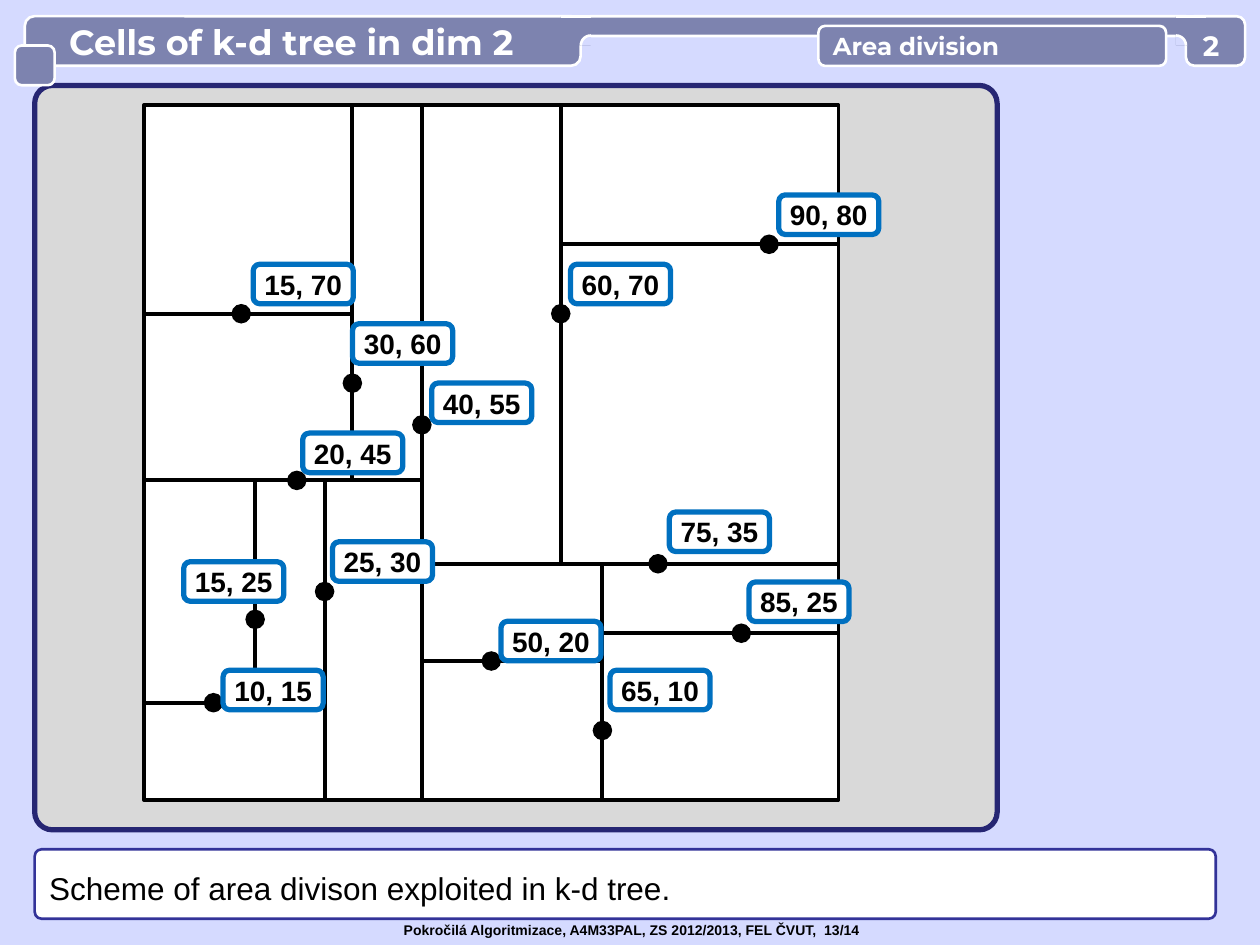
import math

from lxml import etree
from pptx import Presentation
from pptx.dml.color import RGBColor
from pptx.enum.shapes import MSO_CONNECTOR, MSO_SHAPE
from pptx.enum.text import MSO_ANCHOR, MSO_AUTO_SIZE, PP_ALIGN
from pptx.oxml.ns import qn
from pptx.util import Pt

RECT, ROUND = MSO_SHAPE.RECTANGLE, MSO_SHAPE.ROUNDED_RECTANGLE
STRAIGHT = MSO_CONNECTOR.STRAIGHT
LEFT, CENTER = PP_ALIGN.LEFT, PP_ALIGN.CENTER
MIDDLE, TOP = MSO_ANCHOR.MIDDLE, MSO_ANCHOR.TOP

BLACK, WHITE, BACKGROUND, BANNER = "000000", "FFFFFF", "D5DAFF", "7D83AF"

# The divided area spans 0 to 100 on both axes, with y pointing up.
AREA_LEFT, AREA_TOP, AREA_SIZE = 82.3, 60.2, 396.9
BANNER_TOP, FILLET, FILLET_BASE = 9.3, 5.7, 26

# Dividing lines: x1, y1, x2, y2 in area units
CUTS = [
    (40, 0, 40, 100), (0, 46, 40, 46), (40, 34, 100, 34),
    (30, 46, 30, 100), (0, 70, 30, 70),
    (26, 0, 26, 46), (16, 14, 16, 46), (0, 14, 26, 14),
    (60, 34, 60, 100), (60, 80, 100, 80),
    (66, 0, 66, 34), (66, 24, 100, 24), (40, 20, 66, 20),
]

# Nodes: label, dot in area units, direction of its stub, label corner in points
NODES = [
    ("60, 70", (60, 70), (0, -2), (326, 151)),
    ("85, 25", (86, 24), (2, 0), (428, 332.6)),
    ("75, 35", (74, 34), (-2, 0), (382.5, 292.6)),
    ("65, 10", (66, 10), (0, 2), (348.6, 383)),
    ("50, 20", (50, 20), (2, 0), (286.3, 355)),
    ("40, 55", (40, 54), (0, -2), (246.7, 218.9)),
    ("30, 60", (30, 60), (0, -2), (201.5, 185)),
    ("15, 70", (14, 70), (2, 0), (144.7, 151)),
    ("20, 45", (22, 46), (-2, 0), (173, 247.5)),
    ("25, 30", (26, 30), (0, -2), (190, 309.6)),
    ("15, 25", (16, 26), (0, 2), (105, 321)),
    ("10, 15", (10, 14), (2, 0), (127.5, 383)),
    ("90, 80", (90, 80), (2, 0), (445, 111.4)),
]


def rgb(value):
    return RGBColor.from_string(value)


def style(sp, fill=None, line=None, width=1.5):
    sp.shadow.inherit = False
    if fill:
        sp.fill.solid()
        sp.fill.fore_color.rgb = rgb(fill)
    else:
        sp.fill.background()
    if line:
        sp.line.color.rgb = rgb(line)
        sp.line.width = Pt(width)
    else:
        sp.line.fill.background()


def add_box(s, kind, box, fill, line=None, width=1.5, radius=None):
    sp = s.shapes.add_shape(kind, *map(Pt, box))
    if radius is not None:
        sp.adjustments[0] = radius
    style(sp, fill, line, width)
    return sp


def write(sp, text, size, font, color, bold=True, align=LEFT, anchor=MIDDLE,
          insets=(0, 0), wrap=True):
    """Fill a shape with one paragraph; insets are horizontal and vertical."""
    tf = sp.text_frame
    tf.word_wrap = wrap
    tf.auto_size = MSO_AUTO_SIZE.NONE
    tf.vertical_anchor = anchor
    tf.margin_left = tf.margin_right = Pt(insets[0])
    tf.margin_top = tf.margin_bottom = Pt(insets[1])
    p = tf.paragraphs[0]
    p.text = text
    p.alignment = align
    p.font.size, p.font.name, p.font.bold = Pt(size), font, bold
    p.font.color.rgb = rgb(color)
    return p


def add_line(s, start, end, color=BLACK, width=2.25, dot=False):
    c = s.shapes.add_connector(STRAIGHT, *map(Pt, (*start, *end)))
    c.line.color.rgb = rgb(color)
    c.line.width = Pt(width)
    if dot:
        etree.SubElement(c.line._get_or_add_ln(), qn("a:tailEnd"),
                         type="oval", w="lg", len="lg")
    etree.SubElement(c._element.spPr, qn("a:effectLst"))


def add_freeform(s, points, fill=None, line=None):
    points = [(Pt(x), Pt(y)) for x, y in points]
    builder = s.shapes.build_freeform(*points[0])
    builder.add_line_segments(points[1:], close=fill is not None)
    style(builder.convert_to_shape(), fill, line)


def area_point(x, y):
    unit = AREA_SIZE / 100
    return AREA_LEFT + x * unit, AREA_TOP + (100 - y) * unit


def add_area(s):
    add_box(s, RECT, (AREA_LEFT, AREA_TOP, AREA_SIZE, AREA_SIZE), WHITE, BLACK, 2.25)
    for x1, y1, x2, y2 in CUTS:
        add_line(s, area_point(x1, y1), area_point(x2, y2))
    for _, (x, y), (dx, dy), _ in NODES:
        add_line(s, area_point(x + dx, y + dy), area_point(x, y), dot=True)


def add_labels(s):
    for text, _, _, corner in NODES:
        sp = add_box(s, ROUND, (*corner, 57.2, 22.6), WHITE, "0070C0", 3)
        write(sp, text, 16, "Arial", BLACK, align=CENTER)


def add_joint(s, left, center_x, side):
    """Blend a banner tab into the thin bar; side is -1 or 1 for the arc's side."""
    width = 17
    add_box(s, RECT, (left, BANNER_TOP, width, FILLET_BASE - BANNER_TOP), BANNER)
    add_line(s, (left, BANNER_TOP), (left + width, BANNER_TOP), WHITE, 1.5)
    angles = [math.pi / 2 * i / 8 for i in range(9)]
    arc = [(center_x + side * FILLET * math.sin(a),
            FILLET_BASE - FILLET * math.cos(a)) for a in angles]
    add_freeform(s, arc + [(center_x, FILLET_BASE)], fill=BACKGROUND)
    add_freeform(s, arc, line=WHITE)


def add_header(s):
    def tab(box, radius=0.17):
        return add_box(s, ROUND, box, BANNER, WHITE, radius=radius)

    tab((332, BANNER_TOP, 351.4, 11.3), 0.5)
    tab((677.7, BANNER_TOP, 33.8, 28.3))
    add_joint(s, 672, 672, 1)
    topic = tab((467.7, 14.8, 198.7, 22.9))
    write(topic, "Area division", 14, "Montserrat", WHITE, insets=(7.2, 0), wrap=False)
    number = s.shapes.add_textbox(*map(Pt, (677.7, 16.4, 28.8, 19.4)))
    write(number, "2", 16, "Montserrat", WHITE, align=CENTER)
    tab((14.2, BANNER_TOP, 317.6, 28.3), 0.19)
    tab((8.5, 26, 22.7, 22.7))
    add_joint(s, 320.6, 337.6, -1)

    title = s.shapes.title
    s.shapes._spTree.append(title._element)
    title.left, title.top, title.width, title.height = map(Pt, (39.5, BANNER_TOP, 290, 28.3))
    write(title, "Cells of k-d tree in dim 2", 20, "Montserrat", WHITE)


def add_caption(s):
    sp = add_box(s, ROUND, (19.8, 485.3, 674.9, 39.7), WHITE, "333399", radius=0.1)
    p = write(sp, "Scheme of area divison exploited in k-d tree.", 18, "Arial",
              BLACK, bold=False, insets=(7.2, 3.6))
    p.line_spacing = 1.2


def add_footer(s):
    sp = s.shapes.add_textbox(*map(Pt, (223.6, 523.3, 281, 17)))
    write(sp, "Pokročilá Algoritmizace, A4M33PAL, ZS 2012/2013, FEL ČVUT,  13/14",
          8, "Arial", BLACK, anchor=TOP, insets=(7.2, 3.6), wrap=False)


def main():
    prs = Presentation()
    prs.slide_width, prs.slide_height = Pt(720), Pt(540)
    s = prs.slides.add_slide(prs.slide_layouts[5])
    s.background.fill.solid()
    s.background.fill.fore_color.rgb = rgb(BACKGROUND)
    add_box(s, ROUND, (19.8, 48.8, 550, 425.4), "D9D9D9", "262673", 3, 0.024)
    add_area(s)
    add_caption(s)
    add_labels(s)
    add_footer(s)
    add_header(s)
    prs.save("out.pptx")


if __name__ == "__main__":
    main()
